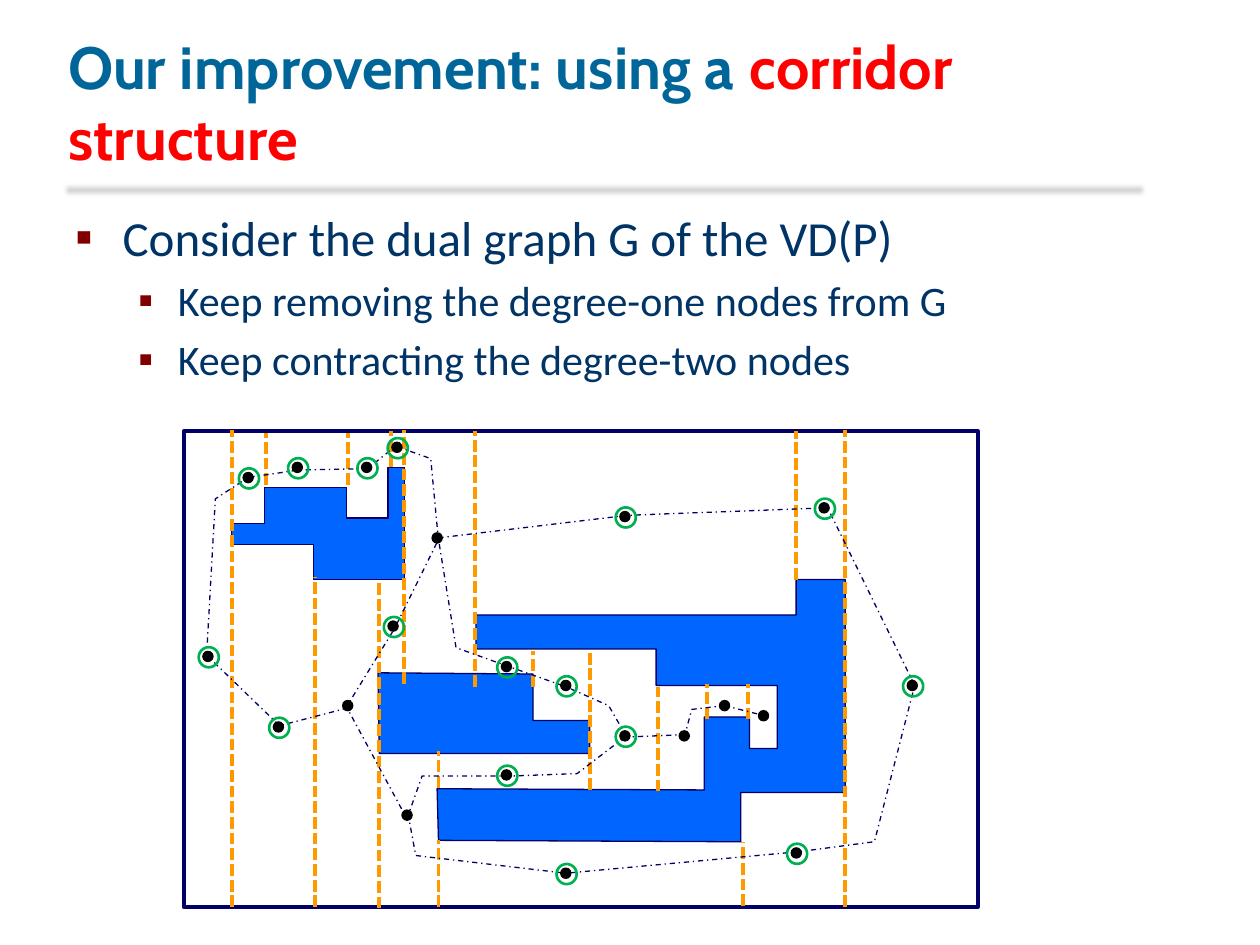
from lxml import etree
from pptx import Presentation
from pptx.dml.color import RGBColor
from pptx.enum.dml import MSO_LINE
from pptx.enum.shapes import MSO_CONNECTOR, MSO_SHAPE
from pptx.enum.text import MSO_ANCHOR, MSO_AUTO_SIZE, PP_ALIGN
from pptx.oxml.ns import qn
from pptx.util import Pt

BOTTOM, LEFT, NO_AUTOFIT = MSO_ANCHOR.BOTTOM, PP_ALIGN.LEFT, MSO_AUTO_SIZE.NONE
RECTANGLE, OVAL, STRAIGHT = MSO_SHAPE.RECTANGLE, MSO_SHAPE.OVAL, MSO_CONNECTOR.STRAIGHT
SQUARE_DOT, DASH_DOT = MSO_LINE.SQUARE_DOT, MSO_LINE.DASH_DOT

TEAL = RGBColor(0x00, 0x66, 0x99)
RED = RGBColor(0xFF, 0x00, 0x00)
DARK_BLUE = RGBColor(0x00, 0x33, 0x66)
MAROON = RGBColor(0x80, 0x00, 0x00)
NAVY = RGBColor(0x00, 0x00, 0x66)
BLUE = RGBColor(0x00, 0x66, 0xFF)
ORANGE = RGBColor(0xFF, 0x99, 0x00)
GREEN = RGBColor(0x00, 0xB0, 0x50)
BLACK = RGBColor(0x00, 0x00, 0x00)
GREY = RGBColor(0xD4, 0xD4, 0xD4)

presentation = Presentation()
presentation.slide_width, presentation.slide_height = Pt(720), Pt(540)
slide = presentation.slides.add_slide(presentation.slide_layouts[5])
shapes = slide.shapes


def style(shape, fill=None, line=None, width=0.75, dash=None):
    """Set fill and outline; None means that there is none."""
    shape.shadow.inherit = False
    if fill is None:
        shape.fill.background()
    else:
        shape.fill.solid()
        shape.fill.fore_color.rgb = fill
    if line is None:
        shape.line.fill.background()
        return
    shape.line.color.rgb = line
    shape.line.width = Pt(width)
    if dash is not None:
        shape.line.dash_style = dash


def add_path(points, close):
    (start_x, start_y), *rest = [(Pt(x), Pt(y)) for x, y in points]
    builder = shapes.build_freeform(start_x, start_y)
    builder.add_line_segments(rest, close=close)
    return builder.convert_to_shape()


# Soft rule under the title
rule = shapes.add_shape(RECTANGLE, Pt(35), Pt(103.5), Pt(621), Pt(10))
style(rule, fill=GREY)
effects = rule._element.spPr.find(qn("a:effectLst"))
etree.SubElement(effects, qn("a:softEdge"), rad=str(Pt(3)))

# Title
title = shapes.title
title.left, title.top, title.width, title.height = Pt(31.7), Pt(12.2), Pt(612), Pt(90)
title_format = {"vertical_anchor": BOTTOM, "word_wrap": True, "auto_size": NO_AUTOFIT}
for name, value in title_format.items():
    setattr(title.text_frame, name, value)
paragraph = title.text_frame.paragraphs[0]
paragraph.alignment = LEFT
title_font = {"name": "Cabin", "size": Pt(34), "bold": True}
for text, color in [("Our improvement: using a ", TEAL), ("corridor structure", RED)]:
    run = paragraph.add_run()
    run.text = text
    for name, value in title_font.items():
        setattr(run.font, name, value)
    run.font.color.rgb = color
    run.font._element.set("spc", "10")

# Bullets: text, level, size, indent, hanging
bullets = [
    ("Consider the dual graph G of the VD(P)", 0, 28, 27, 27),
    ("Keep removing the degree-one nodes from G", 1, 24, 58.5, 22.5),
    ("Keep contracting the degree-two nodes", 1, 24, 58.5, 22.5),
]
body = shapes.add_textbox(Pt(36), Pt(115.2), Pt(641.5), Pt(92)).text_frame
body.word_wrap = True
for index, (text, level, size, indent, hanging) in enumerate(bullets):
    paragraph = body.add_paragraph() if index else body.paragraphs[0]
    paragraph.level = level
    paragraph.space_before = Pt(size * 0.2)
    run = paragraph.add_run()
    run.text = text
    for name, value in {"name": "Calibri", "size": Pt(size)}.items():
        setattr(run.font, name, value)
    run.font.color.rgb = DARK_BLUE
    properties = paragraph._p.get_or_add_pPr()
    properties.set("marL", str(Pt(indent)))
    properties.set("indent", str(-Pt(hanging)))
    bullet_color = etree.SubElement(properties, qn("a:buClr"))
    etree.SubElement(bullet_color, qn("a:srgbClr"), val=str(MAROON))
    etree.SubElement(properties, qn("a:buFont"), typeface="Calibri")
    etree.SubElement(properties, qn("a:buChar"), char="▪")

# Frame and obstacles
frame = shapes.add_shape(RECTANGLE, Pt(105.1), Pt(246.2), Pt(453.6), Pt(272.2))
style(frame, line=NAVY, width=2.25)
obstacles = [
    [(132.5, 299), (132.5, 311), (179.3, 311), (179.3, 331.2), (231.1, 331.2),
     (231.1, 267), (221.8, 267), (221.8, 296), (198, 296), (198, 278.6),
     (151.2, 278.6), (151.2, 299)],
    [(272, 351.4), (272, 370.8), (375, 370.8), (375, 391.7), (444.2, 391.7),
     (444.2, 427.7), (428.4, 427.7), (428.4, 409.7), (402.5, 409.7), (402.5, 451.4),
     (249.8, 450.7), (250.6, 480.2), (423.4, 481), (423.4, 452.9), (483.1, 452.9),
     (483.1, 331.2), (455, 331.2), (455, 351.4)],
    [(216, 384.5), (304.6, 385.2), (304.6, 411.8), (337, 411.8), (337, 430.6),
     (216.7, 430.6)],
]
for points in obstacles:
    style(add_path(points, close=True), fill=BLUE, line=NAVY)

# Vertical decomposition: x, bottom, top
walls = [
    (271.4, 392.4, 246.2), (231.1, 391, 245.5), (483.1, 518.4, 245.5),
    (132.5, 518.4, 245.5), (216.7, 519.1, 331.2), (180, 518.4, 329.8),
    (250.6, 518.4, 480.2), (424.8, 517.7, 481), (337.3, 451.4, 372.2),
    (376.2, 452.2, 392.4), (304.6, 392.4, 372.2), (403.9, 411.1, 391),
    (427.7, 411.1, 391), (455, 331.2, 246.2), (198.7, 277.2, 247.7),
    (151.9, 277.2, 247.7), (223.2, 267.1, 246.2), (250.6, 450, 429.1),
]
for x, bottom, top in walls:
    wall = shapes.add_connector(STRAIGHT, Pt(x), Pt(bottom), Pt(x), Pt(top))
    wall.line.color.rgb = ORANGE
    wall.line.width = Pt(2.25)
    wall.line.dash_style = SQUARE_DOT
    etree.SubElement(wall._element.spPr, qn("a:effectLst"))

# Edges of the dual graph
edges = [
    [(250.6, 307.4), (358.6, 294.5), (473, 290.2), (522.7, 391.7), (499.7, 481),
     (456.5, 486.7), (323.3, 499), (237.6, 488.9), (233.3, 465.8), (241.2, 443.5),
     (290.9, 443.5), (329.8, 442.1), (357.1, 421.2)],
    [(357.8, 420.5), (347.8, 403.2), (323.3, 392.4), (288.7, 380.2), (260.6, 370.1),
     (250.6, 308.2), (225.4, 359.3), (198, 403.9), (232.6, 468)],
    [(198.7, 404.6), (159.8, 414.7), (118.1, 374.4), (123.1, 285.1), (141.8, 272.9),
     (170.6, 268.6), (210.2, 267.8), (226.1, 254.9), (246.2, 262.1), (250.6, 308.9)],
    [(356.4, 421.2), (391.7, 419.8)],
    [(391, 421.2), (395.3, 405.4), (414, 403.2)],
    [(414, 403.2), (437, 409)],
]
for points in edges:
    style(add_path(points, close=False), line=NAVY, dash=DASH_DOT)

# Nodes by centre; low-degree nodes on cycles get a ring
plain_nodes = [(232.6, 465.8), (391, 420.5), (414, 403.2), (436.3, 409),
               (198.7, 403.2), (249.8, 307.4)]
ringed_nodes = [
    (455, 487.4), (521.3, 391.7), (470.9, 290.2), (323.3, 499), (289.4, 442.8),
    (357.1, 420.5), (323.3, 391.7), (289.4, 380.9), (224.6, 357.8), (159.1, 415.4),
    (118.8, 375.1), (141.8, 272.9), (169.9, 267.1), (209.5, 267.1), (226.8, 255.6),
    (357.1, 295.2),
]
dot_format = {"fill": BLACK, "line": BLACK}
ring_format = {"line": GREEN, "width": 1.5}
for nodes, size, shift, node_format in [
    (plain_nodes + ringed_nodes, 5.8, 0, dot_format),
    (ringed_nodes, 11.5, 0.5, ring_format),
]:
    for x, y in nodes:
        corner = shift - size / 2
        node = shapes.add_shape(OVAL, Pt(x + corner), Pt(y + corner), Pt(size), Pt(size))
        style(node, **node_format)

presentation.save("out.pptx")
